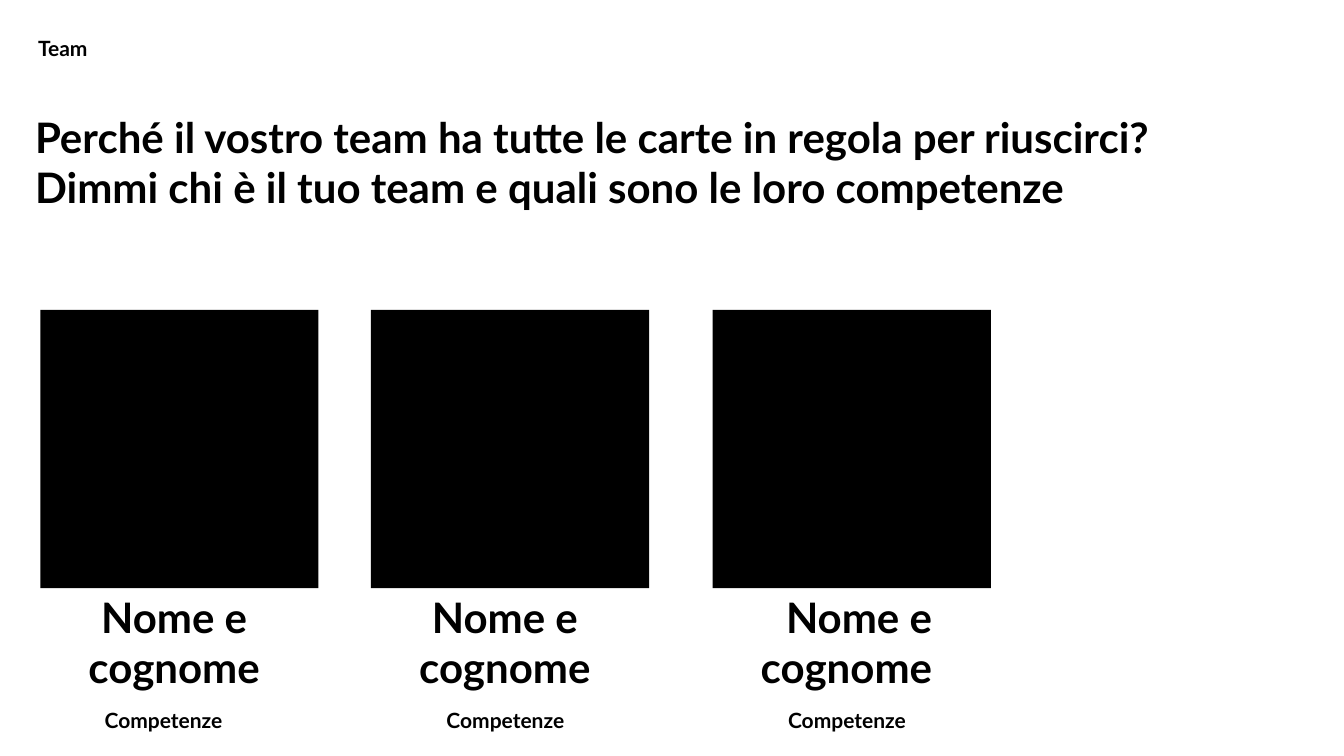
from pptx import Presentation
from pptx.dml.color import RGBColor
from pptx.enum.shapes import MSO_SHAPE
from pptx.enum.text import MSO_ANCHOR, MSO_AUTO_SIZE, PP_ALIGN
from pptx.util import Pt

INK = "000000"
SIDE = 397.4


def color(value):
    """Turn a hex string into a colour."""
    return RGBColor.from_string(value)


def place(shape, left, top, width, height):
    """Set the box of a shape, in points."""
    shape.left, shape.top = Pt(left), Pt(top)
    shape.width, shape.height = Pt(width), Pt(height)


def write(shape, lines, size, align):
    """Fill a shape with bold lines of one size."""
    frame = shape.text_frame
    frame.word_wrap = True
    frame.auto_size = MSO_AUTO_SIZE.NONE
    frame.vertical_anchor = MSO_ANCHOR.MIDDLE
    frame.margin_left = frame.margin_right = Pt(4)
    frame.margin_top = frame.margin_bottom = Pt(4)
    frame.text = "\n".join(lines)
    for para in frame.paragraphs:
        para.alignment = align
        para.line_spacing = 1.0
        font = para.font
        font.name, font.size, font.bold = "Lato", Pt(size), True
        font.color.rgb = color(INK)


def label(slide, box, text, size, align=PP_ALIGN.CENTER):
    """Add a one-paragraph text box and return its paragraph."""
    shape = slide.shapes.add_textbox(*map(Pt, box))
    write(shape, [text], size, align)
    return shape.text_frame.paragraphs[0]


def header(slide, left, top, width):
    """Place the section name and the title."""
    label(slide, (left + 4.4, top, 1168.6, 49), "Team", 30, PP_ALIGN.LEFT)
    title = slide.shapes.title
    place(title, left, top + 100, width, 172)
    lines = [
        "Perché il vostro team ha tutte le carte in regola per riuscirci?",
        "Dimmi chi è il tuo team e quali sono le loro competenze",
    ]
    write(title, lines, 60, PP_ALIGN.LEFT)


def member(slide, left, top, shift, indent):
    """Place a portrait square with a name and skills below it."""
    photo = slide.shapes.add_shape(
        MSO_SHAPE.RECTANGLE, Pt(left), Pt(top), Pt(SIDE), Pt(SIDE))
    photo.shadow.inherit = False
    photo.fill.solid()
    photo.fill.fore_color.rgb = color(INK)
    photo.line.fill.background()
    base = top + SIDE
    name = label(slide, (left - 7.5, base, SIDE, 153.4), "Nome e cognome", 60)
    if indent:
        name.level = 1
        props = name._p.get_or_add_pPr()
        props.set("marL", "0")
        props.set("indent", str(Pt(indent)))
    label(slide, (left + shift, base + 163.5, 430, 49), "Competenze", 30)


def main():
    """Build the team slide."""
    deck = Presentation()
    deck.slide_width, deck.slide_height = Pt(1920), Pt(1080)
    slide = deck.slides.add_slide(deck.slide_layouts[5])
    header(slide, 46, 44.6, 1803.6)
    people = [(57.6, -39, 0), (530, -23, 0), (1018, -23, 36)]
    for left, shift, indent in people:
        member(slide, left, 442.8, shift, indent)
    deck.save("out.pptx")


if __name__ == "__main__":
    main()
